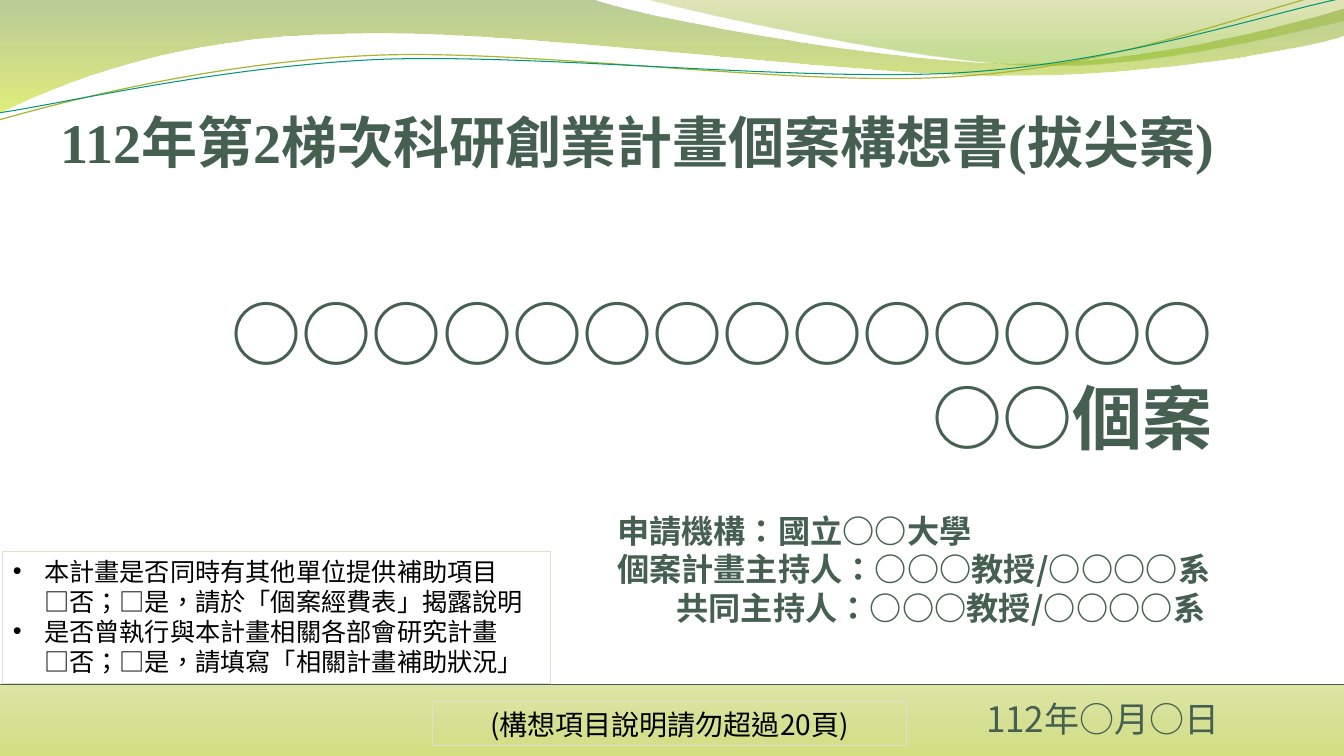
import math

import pptx
import pptx.dml.color
import pptx.enum.lang
import pptx.enum.shapes
import pptx.enum.text
import pptx.oxml
import pptx.oxml.ns
import pptx.util
from pptx.util import Inches

THEME = {
    "dark": "455F51", "black": "000000", "border": "E3DED1",
    "olive": "A8B532", "teal": "029676",
    "serif": "Times New Roman", "sans": "Noto Sans CJK SC", "traditional": "Noto Sans CJK TC",
    "title": 40, "case": 50, "applicant": 23, "date": 25, "limit": 20, "note": 18,
}

BANDS = [
    {"outline": [(0, 0), (5.87, -0.01), (6.34, 0.17, 8.84, 0.63, 10.11, 0.63),
                 (11.37, 0.63, 12.77, 0.26, 13.33, 0.09), (13.34, 0.36),
                 (13.11, 0.44, 11.59, 0.76, 9.94, 0.75), (8.29, 0.75, 5.09, 0.28, 3.43, 0.34),
                 (1.72, 0.36, 0.61, 0.83, -0.02, 1.13)],
     "stops": [(0, "668F1B", 45), (100, "CAE00E", 55)]},
    {"outline": [(6.38, -0.01), (6.79, 0.11, 9.09, 0.62, 10.25, 0.65),
                 (11.4, 0.69, 12.82, 0.32, 13.33, 0.21), (13.33, 0)],
     "stops": [(0, "99A719", 30), (80, "80B814", 45), (100, "80B814", 45)]},
]
WAVE_ROTATION = 357.3
WAVES = [
    {"outline": [(-0.01, 1.19), (0.63, 1.01, 2.1, 0.62, 3.69, 0.55),
                 (5.27, 0.48, 7.89, 0.87, 9.49, 0.76), (11.1, 0.66, 12.51, 0.08, 13.3, -0.1)],
     "center": (6.65, 0.575), "color": "olive", "weight": 0.85},
    {"outline": [(-0.01, 1.12), (0.62, 1.03, 2.18, 0.66, 3.77, 0.59),
                 (5.37, 0.53, 7.96, 0.82, 9.55, 0.72), (11.14, 0.62, 12.55, 0.14, 13.33, -0.02)],
     "center": (6.67, 0.59), "color": "teal", "weight": 0.75},
]
FOOTER_STOPS = [(0, "DCE5A3", 100), (50, "D6E095", 100), (100, "D4DF81", 100)]

PLAIN_INSETS = (0, 0, 0.02, 0)
BODY_INSETS = (0, 0.05, 0.02, 0.05)
BOX_INSETS = (0.1, 0.05, 0.1, 0.05)
TEXTS = [
    {"at": (0.6, 0.98, 12.07, 0.75), "insets": PLAIN_INSETS, "anchor": "BOTTOM",
     "size": "title", "font": "serif", "color": "dark", "bold": True,
     "lines": ["112年第2梯次科研創業計畫個案構想書(拔尖案)"]},
    {"at": (6.12, 5.02, 6.55, 1.55), "insets": BODY_INSETS,
     "size": "applicant", "font": "sans", "color": "dark", "bold": True,
     "indents": [0, 0, 0.59],
     "lines": ["申請機構：國立○○大學", "個案計畫主持人：○○○教授/○○○○系",
               "共同主持人：○○○教授/○○○○系"]},
    {"at": (0.6, 2.55, 11.45, 2), "insets": PLAIN_INSETS, "anchor": "BOTTOM", "align": "RIGHT",
     "size": "case", "font": "sans", "color": "dark", "bold": True,
     "lines": ["○○○○○○○○○○○○○○", "○○個案"]},
    {"at": (9.69, 6.87, 2.56, 0.63), "insets": BODY_INSETS, "indents": [0.09],
     "size": "date", "font": "sans", "color": "dark",
     "lines": ["112年○月○日"]},
    {"at": (4.29, 6.96, 4.7, 0.44), "insets": BOX_INSETS, "align": "CENTER", "framed": True,
     "size": "limit", "font": "traditional", "color": "black", "line_height": 1.25,
     "lines": ["(構想項目說明請勿超過20頁)"]},
    {"at": (0.03, 5.47, 5.43, 1.31), "insets": BOX_INSETS, "framed": True, "bullet": 0.31,
     "size": "note", "font": "sans", "color": "black", "line_height": 1.19,
     "lines": ["本計畫是否同時有其他單位提供補助項目\v□否；□是，請於「個案經費表」揭露說明",
               "是否曾執行與本計畫相關各部會研究計畫\v□否；□是，請填寫「相關計畫補助狀況」"]},
]


def rgb(name):
    return pptx.dml.color.RGBColor.from_string(THEME[name])


def add_child(parent, tag, **attributes):
    child = parent.makeelement(pptx.oxml.ns.qn(tag), attributes)
    parent.append(child)
    return child


def fill_gradient(shape, stops):
    shape.fill.background()
    properties = shape._element.spPr
    empty_fill = properties.find(pptx.oxml.ns.qn("a:noFill"))
    gradient = pptx.oxml.parse_xml("<a:gradFill %s/>" % pptx.oxml.ns.nsdecls("a"))
    stop_list = add_child(gradient, "a:gsLst")
    for position, color, opacity in stops:
        stop = add_child(stop_list, "a:gs", pos=str(position * 1000))
        shade = add_child(stop, "a:srgbClr", val=color)
        if opacity < 100:
            add_child(shade, "a:alpha", val=str(opacity * 1000))
    add_child(gradient, "a:lin", ang="5400000", scaled="0")
    properties.replace(empty_fill, gradient)
    shape.line.fill.background()
    shape.shadow.inherit = False


def turn(point, center, degrees):
    angle = math.radians(degrees)
    x, y = point[0] - center[0], point[1] - center[1]
    return (center[0] + x * math.cos(angle) - y * math.sin(angle),
            center[1] + x * math.sin(angle) + y * math.cos(angle))


def add_curve(slide, outline, close, center=(0, 0), rotation=0):
    points = [turn(segment[i:i + 2], center, -rotation)
              for segment in outline for i in range(0, len(segment), 2)]
    points = [(Inches(x), Inches(y)) for x, y in points]
    builder = slide.shapes.build_freeform(*points[0])
    builder.add_line_segments(points[1:], close=close)
    shape = builder.convert_to_shape()
    lines = iter(list(shape._element.iter(pptx.oxml.ns.qn("a:lnTo"))))
    for segment in outline[1:]:
        corners = [next(lines) for _ in range(len(segment) // 2)]
        if len(corners) == 3:
            curve = corners[0].makeelement(pptx.oxml.ns.qn("a:cubicBezTo"), {})
            corners[0].addprevious(curve)
            for corner in corners:
                curve.append(corner[0])
                corner.getparent().remove(corner)
    shape.rotation = rotation
    return shape


def add_background(slide, width):
    for band in BANDS:
        fill_gradient(add_curve(slide, band["outline"], True), band["stops"])
    for wave in WAVES:
        shape = add_curve(slide, wave["outline"], False, wave["center"], WAVE_ROTATION)
        shape.fill.background()
        shape.line.color.rgb = rgb(wave["color"])
        shape.line.width = pptx.util.Pt(wave["weight"])
        shape.shadow.inherit = False
    footer = slide.shapes.add_shape(pptx.enum.shapes.MSO_SHAPE.RECTANGLE,
                                    0, Inches(6.8), width, Inches(0.7))
    fill_gradient(footer, FOOTER_STOPS)
    rule = slide.shapes.add_connector(pptx.enum.shapes.MSO_CONNECTOR.STRAIGHT,
                                      0, Inches(6.79), width, Inches(6.79))
    rule.line.color.rgb = rgb("dark")
    rule.line.width = pptx.util.Pt(1)
    add_child(rule._element.spPr, "a:effectLst")


def add_text(slide, item):
    place = [Inches(length) for length in item["at"]]
    if item.get("framed"):
        shape = slide.shapes.add_shape(pptx.enum.shapes.MSO_SHAPE.RECTANGLE, *place)
        shape.fill.background()
        shape.line.color.rgb = rgb("border")
        shape.line.width = pptx.util.Pt(0.75)
        shape.shadow.inherit = False
    else:
        shape = slide.shapes.add_textbox(*place)
    frame = shape.text_frame
    frame.word_wrap = True
    frame.vertical_anchor = getattr(pptx.enum.text.MSO_ANCHOR, item.get("anchor", "TOP"))
    (frame.margin_left, frame.margin_top,
     frame.margin_right, frame.margin_bottom) = [Inches(inset) for inset in item["insets"]]
    size = THEME[item["size"]]
    for index, line in enumerate(item["lines"]):
        paragraph = frame.add_paragraph() if index else frame.paragraphs[0]
        paragraph.text = line
        paragraph.alignment = getattr(pptx.enum.text.PP_ALIGN, item.get("align", "LEFT"))
        paragraph.line_spacing = pptx.util.Pt(size * item.get("line_height", 1.2))
        properties = paragraph._p.get_or_add_pPr()
        if "indents" in item:
            properties.set("marL", str(Inches(item["indents"][index])))
        if "bullet" in item:
            properties.set("marL", str(Inches(item["bullet"])))
            properties.set("indent", str(-Inches(item["bullet"])))
            add_child(properties, "a:buFont", typeface="Arial")
            add_child(properties, "a:buChar", char="•")
        font = paragraph.font
        font.size = pptx.util.Pt(size)
        font.bold = item.get("bold", False)
        font.color.rgb = rgb(item["color"])
        font.name = THEME[item["font"]]
        asian = THEME["sans"] if item["font"] == "serif" else font.name
        add_child(font._element, "a:ea", typeface=asian)
        for run in paragraph.runs:
            run.font.language_id = pptx.enum.lang.MSO_LANGUAGE_ID.TRADITIONAL_CHINESE


def main():
    presentation = pptx.Presentation()
    presentation.slide_width = Inches(13.33)
    presentation.slide_height = Inches(7.5)
    slide = presentation.slides.add_slide(presentation.slide_layouts[6])
    add_background(slide, presentation.slide_width)
    for item in TEXTS:
        add_text(slide, item)
    presentation.save("out.pptx")


if __name__ == "__main__":
    main()
